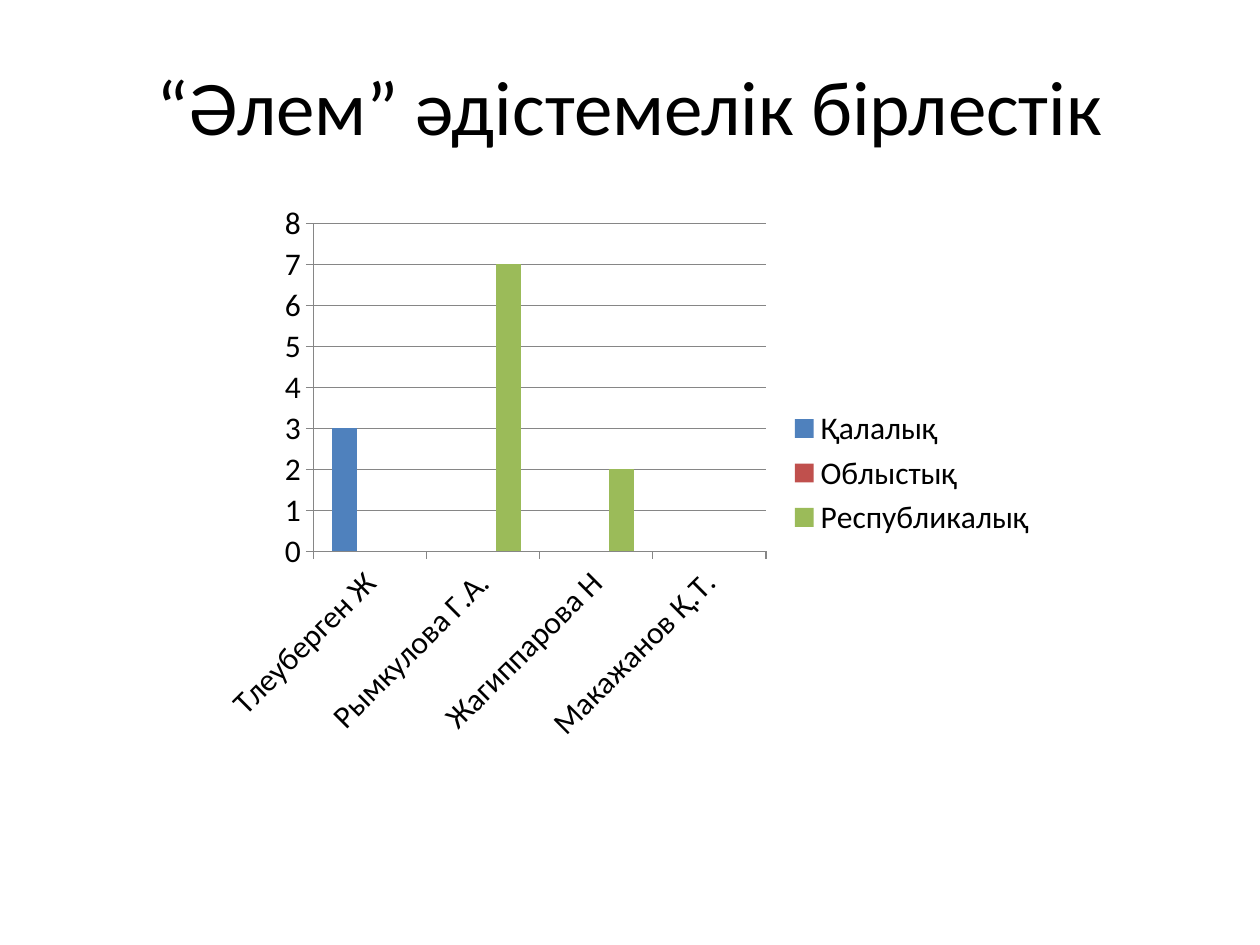
from pptx import Presentation
from pptx.chart.data import CategoryChartData as ChartData
from pptx.dml.color import RGBColor as RGB
from pptx.enum.chart import XL_CHART_TYPE as Kind, XL_LEGEND_POSITION as Side, XL_TICK_MARK as Tick
from pptx.enum.text import MSO_ANCHOR as Anchor, PP_ALIGN as Align
from pptx.util import Cm, Pt

hues = {"text": "000000", "grid": "868686",
        "Қалалық": "4F81BD", "Облыстық": "C0504D", "Республикалық": "9BBB59"}
names = ["Тлеуберген Ж", "Рымкулова Г.А.", "Жагиппарова Н", "Макажанов Қ.Т."]
counts = {
    "Қалалық": [3, None, None, None],
    "Облыстық": [None, None, None, None],
    "Республикалық": [None, 7, 2, None],
}


def style(font, size):
    font.name = "Calibri"
    font.size = Pt(size)
    font.bold = False
    font.color.rgb = RGB.from_string(hues["text"])


deck = Presentation()
deck.slide_width, deck.slide_height = Cm(25.4), Cm(19.05)
slide = deck.slides.add_slide(deck.slide_layouts[5])

title = slide.shapes.title
title.left, title.top, title.width, title.height = Cm(1.9), Cm(0.91), Cm(21.6), Cm(2.4)
frame = title.text_frame
frame.text = "“Әлем” әдістемелік бірлестік"
frame.vertical_anchor = Anchor.MIDDLE
frame.paragraphs[0].alignment = Align.CENTER
style(frame.paragraphs[0].font, 44)

data = ChartData()
data.categories = names
for name, vals in counts.items():
    data.add_series(name, vals)
chart = slide.shapes.add_chart(
    Kind.COLUMN_CLUSTERED, Cm(4.23), Cm(3.89), Cm(16.93), Cm(11.29), data).chart
style(chart.font, 18)
chart.has_title = False
chart.has_legend = True
chart.legend.position = Side.RIGHT
chart.legend.include_in_layout = False

plot = chart.plots[0]
plot.gap_width = 150
plot.overlap = 0
plot.vary_by_categories = False
for bar in plot.series:
    bar.format.fill.solid()
    bar.format.fill.fore_color.rgb = RGB.from_string(hues[bar.name])

scale = chart.value_axis
scale.minimum_scale, scale.maximum_scale, scale.major_unit = 0, 8, 1
scale.has_major_gridlines = True
for axis in (chart.category_axis, scale):
    axis.major_tick_mark = Tick.OUTSIDE
    style(axis.tick_labels.font, 18)
for part in (chart.category_axis, scale, scale.major_gridlines):
    part.format.line.color.rgb = RGB.from_string(hues["grid"])
    part.format.line.width = Pt(0.75)

deck.save("out.pptx")
